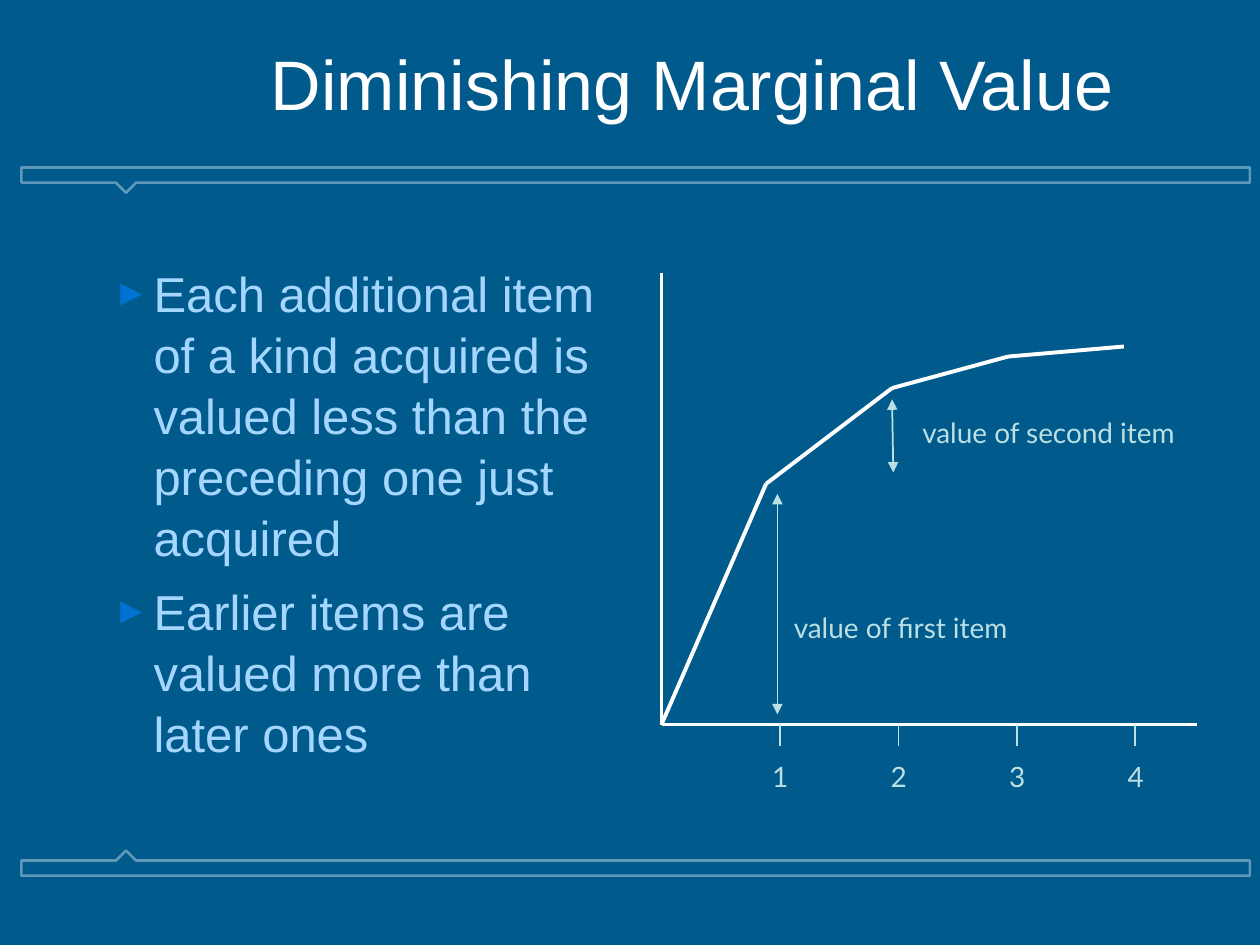
from itertools import pairwise

from lxml.etree import SubElement
from pptx import Presentation
from pptx.dml.color import RGBColor
from pptx.enum.shapes import MSO_CONNECTOR
from pptx.enum.text import MSO_ANCHOR, PP_ALIGN
from pptx.oxml.ns import qn
from pptx.util import Inches, Pt

# Content
TITLE = "Diminishing Marginal Value"
BULLETS = [
    "Each additional item of a kind acquired is valued less than the preceding one just acquired",
    "Earlier items are valued more than later ones",
]
TICKS = ["1", "2", "3", "4"]
ORIGIN = (5.25, 5.75)
AXIS_ENDS = [(5.25, 2.17), (9.5, 5.75)]
CURVE = [ORIGIN, (6.08, 3.84), (7.08, 3.08), (8, 2.83), (8.92, 2.75)]
# Arrow start, arrow end, label, label box
GAINS = [
    ((6.17, 3.92), (6.17, 5.67), "value of first item", (6.15, 4.8, 1.98, 0.37)),
    ((7.08, 3.17), (7.09, 3.75), "value of second item", (7.17, 3.25, 2.3, 0.37)),
]
# Outer edge of each band and the direction its notch points
BANDS = [(1.33, 1), (6.95, -1)]

# Look
NAVY = RGBColor(0x00, 0x5A, 0x8C)
WHITE = RGBColor(0xFF, 0xFF, 0xFF)
SKY = RGBColor(0xA5, 0xD6, 0xFF)
PALE = RGBColor(0xBB, 0xE0, 0xE3)
STEEL = RGBColor(0x5F, 0x99, 0xB9)
BULLET_BLUE = "0072D1"
TICK_START, TICK_STEP, TICK_LENGTH = 6.19, 0.94, 0.17
LABEL_WIDTH = 0.32


def write(frame, texts, size, color, font="Lato", align=PP_ALIGN.LEFT, wrap=True,
          anchor=MSO_ANCHOR.TOP, inset=0.1, bullet=None, gap=0, spacing=None):
    """Fill a text frame with one paragraph for each text."""
    frame.word_wrap = wrap
    frame.vertical_anchor = anchor
    frame.margin_left = Inches(inset)
    for index, text in enumerate(texts):
        para = frame.paragraphs[0] if index == 0 else frame.add_paragraph()
        para.alignment = align
        para.line_spacing = spacing
        if index:
            para.space_before = Pt(gap)
        if bullet:
            properties = para._p.get_or_add_pPr()
            properties.set("marL", str(Inches(0.32)))
            properties.set("indent", str(-Inches(0.32)))
            bullet_color = SubElement(properties, qn("a:buClr"))
            SubElement(bullet_color, qn("a:srgbClr"), val=BULLET_BLUE)
            SubElement(properties, qn("a:buSzPct"), val="75000")
            SubElement(properties, qn("a:buFont"), typeface="Arial")
            SubElement(properties, qn("a:buChar"), char=bullet)
        span = para.add_run()
        span.text = text
        span.font.size = Pt(size)
        span.font.name = font
        span.font.color.rgb = color


def add_text(page, area, texts, **style):
    box = page.shapes.add_textbox(*map(Inches, area))
    write(box.text_frame, texts, **style)


def add_line(page, start, end, color, width, arrows=False):
    line = page.shapes.add_connector(MSO_CONNECTOR.STRAIGHT, *map(Inches, (*start, *end)))
    line.line.color.rgb = color
    line.line.width = Pt(width)
    if arrows:
        outline = line.line._get_or_add_ln()
        for tag in ("a:headEnd", "a:tailEnd"):
            SubElement(outline, qn(tag), type="triangle")
    SubElement(line._element.spPr, qn("a:effectLst"))


def add_band(page, outer, direction):
    left, right, notch, half = 0.17, 9.92, 1, 0.08
    inner, tip = outer + direction * 0.12, outer + direction * 0.2
    points = [(left, outer), (right, outer), (right, inner), (notch + half, inner),
              (notch, tip), (notch - half, inner), (left, inner)]
    corners = [(Inches(x), Inches(y)) for x, y in points]
    builder = page.shapes.build_freeform(*corners[0])
    builder.add_line_segments(corners[1:], close=True)
    band = builder.convert_to_shape()
    band.shadow.inherit = False
    band.fill.background()
    band.line.color.rgb = STEEL
    band.line.width = Pt(1.5)


def main():
    deck = Presentation()
    deck.slide_width, deck.slide_height = Inches(10), Inches(7.5)
    page = deck.slides.add_slide(deck.slide_layouts[5])
    page.background.fill.solid()
    page.background.fill.fore_color.rgb = NAVY

    # Frame bands
    for outer, direction in BANDS:
        add_band(page, outer, direction)

    # Title and bullets
    title = page.shapes.title
    title.left, title.top, title.width, title.height = map(Inches, (2.05, 0.27, 7.62, 0.77))
    write(title.text_frame, [TITLE], size=40, color=WHITE, font="Arial",
          anchor=MSO_ANCHOR.MIDDLE)
    add_text(page, (0.8, 2.02, 4.12, 4.3), BULLETS, size=28, color=SKY, font="Arial",
             bullet="►", gap=7, spacing=1.04)

    # Axes
    for end in AXIS_ENDS:
        add_line(page, ORIGIN, end, WHITE, 2.25)

    # Ticks and their numbers
    base = ORIGIN[1]
    for index, number in enumerate(TICKS):
        x = TICK_START + index * TICK_STEP
        add_line(page, (x, base), (x, base + TICK_LENGTH), PALE, 1)
        add_text(page, (x - LABEL_WIDTH / 2, 5.98, LABEL_WIDTH, 0.37), [number],
                 size=16, color=PALE, align=PP_ALIGN.CENTER, wrap=False)

    # Value curve
    for start, end in pairwise(CURVE):
        add_line(page, start, end, WHITE, 2.25)

    # Gain arrows and labels
    for start, end, label, area in GAINS:
        add_line(page, start, end, PALE, 1, arrows=True)
        add_text(page, area, [label], size=16, color=PALE, inset=0.15)

    deck.save("out.pptx")


if __name__ == "__main__":
    main()
